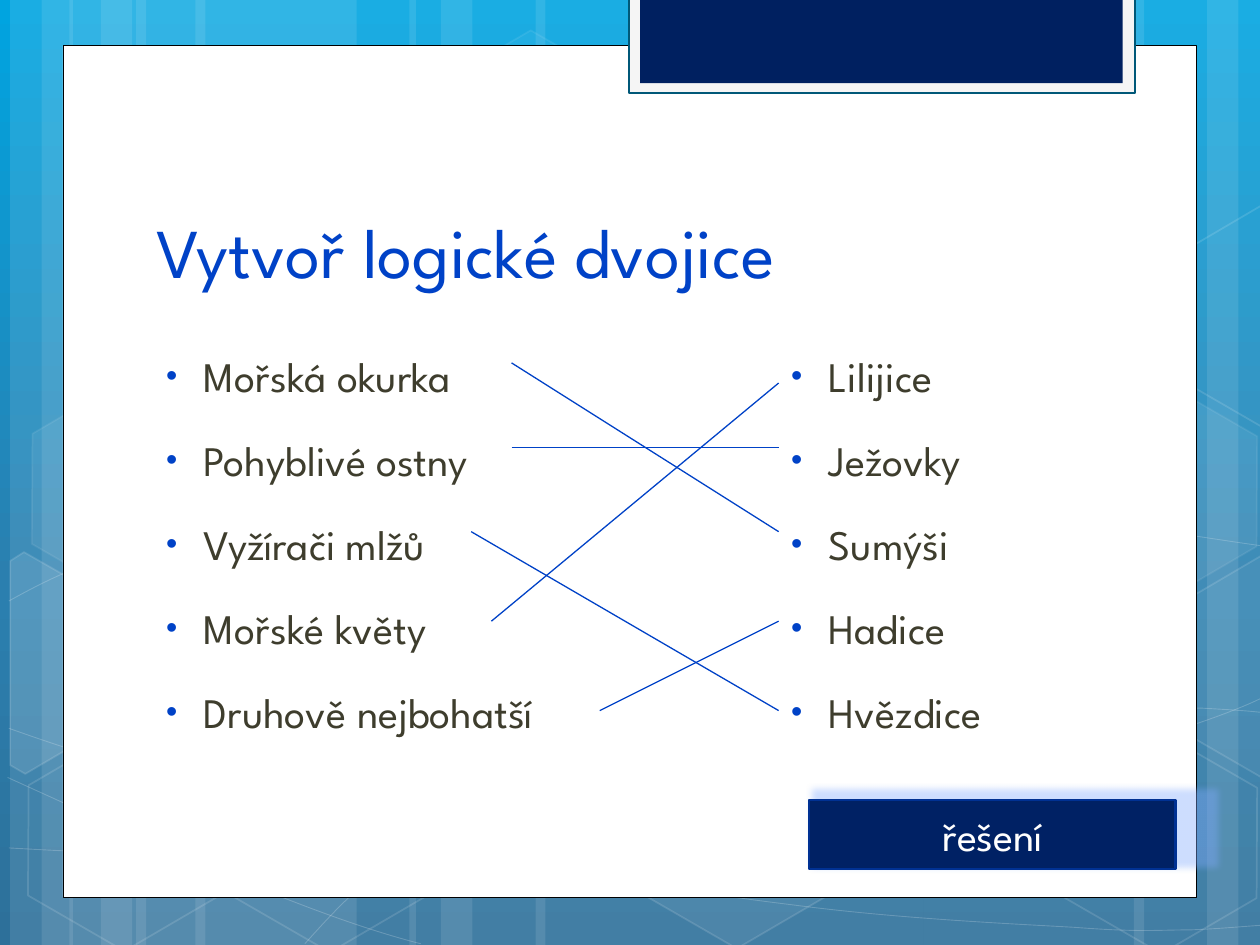
"""Build a matching exercise slide with answer lines over a striped blue frame."""
from copy import deepcopy
from math import cos, pi, sin

from lxml.etree import SubElement
from pptx import Presentation
from pptx.dml.color import RGBColor
from pptx.enum.shapes import MSO_CONNECTOR, MSO_SHAPE
from pptx.enum.text import MSO_ANCHOR, PP_ALIGN
from pptx.oxml.ns import qn
from pptx.util import Inches, Pt

RECT, HEX = MSO_SHAPE.RECTANGLE, MSO_SHAPE.HEXAGON
LINE = MSO_CONNECTOR.STRAIGHT
TOP, MID, LOW = MSO_ANCHOR.TOP, MSO_ANCHOR.MIDDLE, MSO_ANCHOR.BOTTOM
LEFT, CENTER = PP_ALIGN.LEFT, PP_ALIGN.CENTER
WHITE, BLUE, INK = "FFFFFF", "0042C7", "3E3D2D"
rgb = RGBColor.from_string


def paint(shape, fill=None, fade=100, line=None, width=1, dim=100):
    """Set fill and line with their opacity in percent."""
    shape.shadow.inherit = False
    for part, hue, alpha in ((shape.fill, fill, fade), (shape.line.fill, line, dim)):
        if not hue:
            part.background()
            continue
        part.solid()
        part.fore_color.rgb = rgb(hue)
        if alpha < 100:
            tint = list(shape.element.spPr.iter(qn("a:srgbClr")))[-1]
            SubElement(tint, qn("a:alpha"), val=str(alpha * 1000))
    if line:
        shape.line.width = Pt(width)


def write(shape, rows, size, hue, anchor=TOP, align=LEFT):
    """Fill a shape with one paragraph per row."""
    frame = shape.text_frame
    frame.word_wrap = True
    frame.vertical_anchor = anchor
    for i, row in enumerate(rows):
        para = frame.add_paragraph() if i else frame.paragraphs[0]
        para.alignment = align
        run = para.add_run()
        run.text = row
        for key, val in {"name": "League Spartan", "size": Pt(size)}.items():
            setattr(run.font, key, val)
        run.font.color.rgb = rgb(hue)


deck = Presentation()
deck.slide_width, deck.slide_height = Inches(10), Inches(7.5)
slide = deck.slides.add_slide(deck.slide_layouts[6])
shapes = slide.shapes

back = slide.background.fill
back.gradient()
back.gradient_angle = 270
last = list(slide.element.iter(qn("a:gs")))[-1]
last.addnext(deepcopy(last))
tones = [(0, "00A4E0"), (0.62, "2B7FAF"), (1, "2D709A")]
for stop, (spot, hue) in zip(back.gradient_stops, tones):
    stop.position = spot
    stop.color.rgb = rgb(hue)

bands = [(1.08, 0.08, 0.33), (1.55, 0.55, 0.8), (7.33, 9.58, 9), (4.25, 3.25, 3.5)]
for band in bands:
    for x, wide in zip(band, (3.08 if band[0] == 4.25 else 1.75, 0.5, 0.83)):
        bar = shapes.add_shape(RECT, Inches(x), 0, Inches(wide), Inches(7.5))
        paint(bar, WHITE, 10)

curves = [
    [(0.07, 6.73), (0.61, 6.76), (1.15, 6.79), (1.9, 6.78), (2.65, 6.77),
     (3.58, 6.75), (4.58, 6.65), (5.58, 6.55), (7, 6.36), (7.92, 6.17),
     (8.83, 5.98), (9.77, 5.68), (10.07, 5.51)],
    [(0.07, 4.77), (0.36, 4.61), (0.65, 4.46), (1.21, 4.31), (1.78, 4.16),
     (2.59, 3.94), (3.47, 3.87), (4.36, 3.8), (5.44, 3.79), (6.54, 3.87),
     (7.64, 3.95), (9.47, 4.26), (10.07, 4.34)],
    [(0.06, 6.17), (1.27, 6.72), (2.47, 7.27), (3.34, 7.49)],
    [(0.07, 5.78), (0.38, 5.89), (0.7, 6), (1.28, 6.16), (1.86, 6.31),
     (2.73, 6.56), (3.57, 6.73), (4.4, 6.9), (5.45, 7.08), (6.28, 7.18),
     (7.11, 7.29), (8, 7.33), (8.53, 7.36), (9.05, 7.4), (9.19, 7.38),
     (9.45, 7.38), (9.71, 7.37), (9.89, 7.35), (10.07, 7.34)],
    [(2.42, 7.49), (2.6, 7.29), (2.78, 7.09), (3.02, 6.91), (3.26, 6.73),
     (3.6, 6.53), (3.88, 6.39), (4.16, 6.25), (4.33, 6.19), (4.7, 6.09),
     (5.06, 5.99), (5.73, 5.85), (6.08, 5.78), (6.44, 5.71), (6.49, 5.71),
     (6.8, 5.69), (7.11, 5.66), (7.6, 5.63), (7.94, 5.62), (8.29, 5.61),
     (8.86, 5.62), (8.86, 5.62), (9.08, 5.62), (9.31, 5.62), (9.53, 5.62),
     (9.71, 5.63), (9.88, 5.64), (9.97, 5.65), (10.06, 5.66), (10.03, 5.65),
     (10.06, 5.66)],
]
for curve in curves:
    dots = [(Inches(x), Inches(y)) for x, y in curve]
    pen = shapes.build_freeform(*dots[0])
    pen.add_line_segments(dots[1:], close=False)
    wave = pen.convert_to_shape()
    paint(wave, line=WHITE, width=0.5, dim=20)
    legs = list(wave.element.iter(qn("a:lnTo")))
    trail = legs[0].getparent()
    for i in range(0, len(legs), 3):
        bend = SubElement(trail, qn("a:cubicBezTo"))
        for leg in legs[i:i + 3]:
            bend.append(leg[0])
            trail.remove(leg)

cells = [
    (3.34, 0.36, 4, 8), (4.97, 5.89, 6, 12), (0.11, 5.91, 0, 12),
    (0.14, 3.12, 7, 8), (1.74, 5.92, 0, 12), (7.53, 4.53, 10, 12),
    (8.34, 5.93, 0, 12), (8.34, 3.14, 7, 8),
]
for x, y, fade, dim in cells:
    cell = shapes.add_shape(HEX, Inches(x), Inches(y), Inches(1.75), Inches(1.52))
    cell.rotation = 30
    cell.adjustments[0] = 0.285
    paint(cell, WHITE if fade else None, fade, WHITE, 1, dim)

shards = [
    (0.36, 5.35, 10, [(0.08, 4.45), (0.19, 4.38), (0.96, 4.82), (0.95, 5.7),
                      (0.2, 6.14), (0.08, 6.07)]),
    (9.85, 5.2, 4, [(9.26, 4.85), (10.01, 4.41), (10.09, 4.46), (10.09, 6.13),
                    (10.02, 6.17), (9.26, 5.73)]),
    (9.85, 2.41, 0, [(9.26, 2.07), (10.01, 1.63), (10.1, 1.68), (10.09, 3.35),
                     (10.02, 3.39), (9.26, 2.95)]),
]
c, s = cos(pi / 6), sin(pi / 6)
for mx, my, fade, tips in shards:
    dots = [(Inches(mx + (x - mx) * c + (y - my) * s),
             Inches(my + (y - my) * c - (x - mx) * s)) for x, y in tips]
    pen = shapes.build_freeform(*dots[0])
    pen.add_line_segments(dots[1:], close=True)
    shard = pen.convert_to_shape()
    shard.rotation = 30
    paint(shard, WHITE if fade else None, fade, WHITE, 1, 12)

panels = [
    ((0.5, 0.36, 9, 6.76), WHITE, "000000", 0.5),
    ((4.99, -0.02, 4.02, 0.76), "F5F5F5", "005878", 1.25),
    ((5.08, -0.02, 3.83, 0.68), "002060", None, 0),
]
for spot, fill, line, width in panels:
    paint(shapes.add_shape(RECT, *map(Inches, spot)), fill, 100, line, width)

title = shapes.add_textbox(Inches(1.14), Inches(1.12), Inches(7.68), Inches(1.25))
write(title, ["Vytvoř logické dvojice"], 40, BLUE, LOW)

lists = [
    (1.14, 3.74, ["Mořská okurka", "Pohyblivé ostny", "Vyžírači mlžů",
                  "Mořské květy", "Druhově nejbohatší"]),
    (6.1, 2.72, ["Lilijice", "Ježovky", "Sumýši", "Hadice", "Hvězdice"]),
]
for x, wide, rows in lists:
    box = shapes.add_textbox(Inches(x), Inches(2.53), Inches(wide), Inches(3.82))
    write(box, rows, 24, INK)
    for para in box.text_frame.paragraphs:
        for key, val in {"line_spacing": 1.5, "space_before": Pt(4.8)}.items():
            setattr(para, key, val)
        props = para._p.get_or_add_pPr()
        props.set("marL", str(Inches(0.38)))
        props.set("indent", str(Inches(-0.3)))
        SubElement(SubElement(props, qn("a:buClr")), qn("a:srgbClr"), val=BLUE)
        SubElement(props, qn("a:buSzPct"), val="76000")
        SubElement(props, qn("a:buFont"), typeface="Arial")
        SubElement(props, qn("a:buChar"), char="•")

pairs = [(4.06, 2.88, 4.22), (4.06, 3.55, 3.55), (3.74, 4.22, 5.64),
         (4.76, 5.64, 4.93), (3.9, 4.93, 3.04)]
for x, start, end in pairs:
    link = shapes.add_connector(LINE, *map(Inches, (x, start, 6.18, end)))
    link.line.color.rgb = rgb(BLUE)
    link.line.width = Pt(0.75)
    SubElement(link.element.spPr, qn("a:effectLst"))

button = shapes.add_shape(RECT, Inches(6.42), Inches(6.35), Inches(2.91), Inches(0.55))
paint(button, "002164", 100, "003193", 1.25)
write(button, ["řešení"], 24, WHITE, MID, CENTER)
glow = SubElement(button.element.spPr.find(qn("a:effectLst")), qn("a:outerShdw"),
                  blurRad=str(Pt(4)), dist=str(Pt(3)), dir=str(315 * 60000),
                  sx="110000", sy="110000", algn="bl", rotWithShape="0")
tint = SubElement(glow, qn("a:srgbClr"), val="83ACFF")
SubElement(tint, qn("a:alpha"), val="40000")

deck.save("out.pptx")
